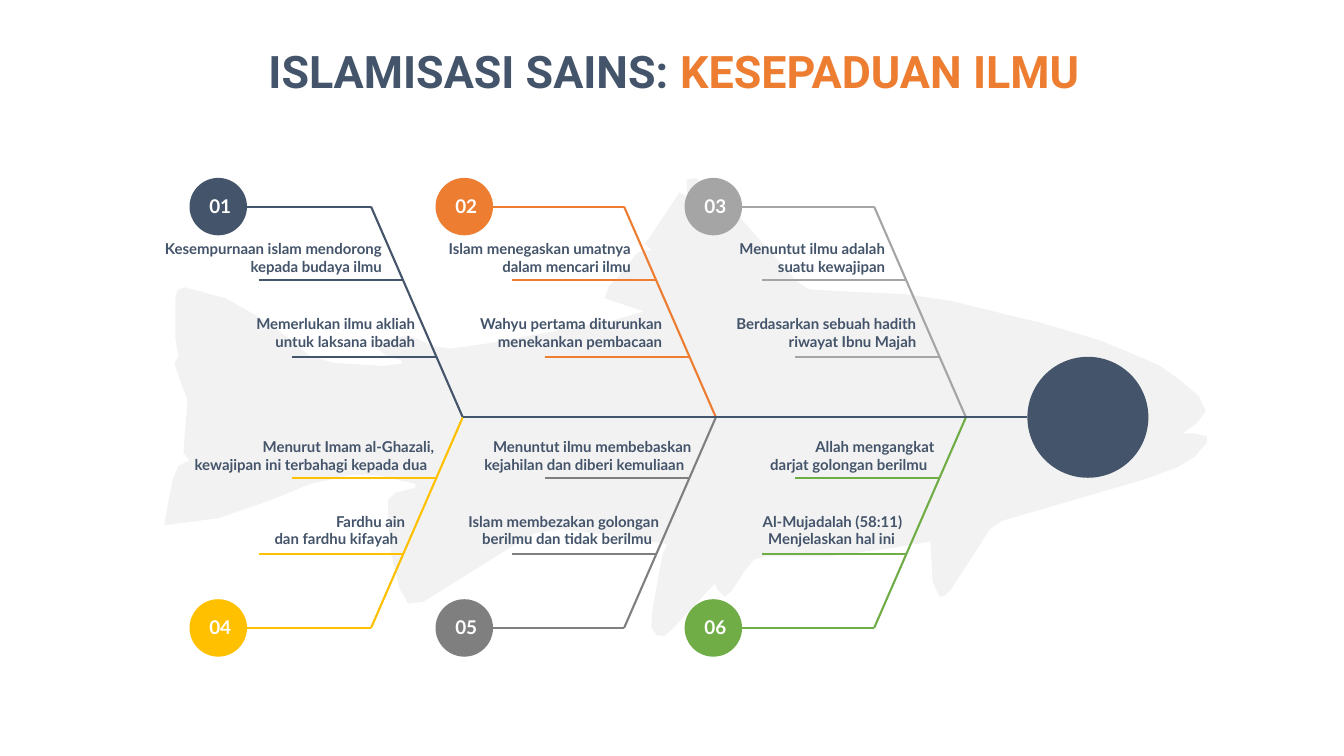
from pptx import Presentation
from pptx.dml.color import RGBColor
from pptx.enum.shapes import MSO_CONNECTOR, MSO_SHAPE
from pptx.enum.text import MSO_ANCHOR, MSO_AUTO_SIZE, PP_ALIGN
from pptx.oxml.ns import qn
from pptx.util import Inches, Pt
from lxml import etree

NAVY = RGBColor(0x44, 0x54, 0x6A)
ORANGE = RGBColor(0xED, 0x7D, 0x31)
SILVER = RGBColor(0xA5, 0xA5, 0xA5)
GOLD = RGBColor(0xFF, 0xC0, 0x00)
GRAY = RGBColor(0x7F, 0x7F, 0x7F)
GREEN = RGBColor(0x70, 0xAD, 0x47)
WHITE = RGBColor(0xFF, 0xFF, 0xFF)
PALE = RGBColor(0xF2, 0xF2, 0xF2)
CENTER, RIGHT = PP_ALIGN.CENTER, PP_ALIGN.RIGHT
MIDDLE, TOP = MSO_ANCHOR.MIDDLE, MSO_ANCHOR.TOP
OVAL, STRAIGHT = MSO_SHAPE.OVAL, MSO_CONNECTOR.STRAIGHT
NO_FIT = MSO_AUTO_SIZE.NONE

TITLE = (("ISLAMISASI SAINS: ", NAVY), ("KESEPADUAN ILMU", ORANGE))

# Each bone: number, colour, then (right edge of text, first line, second line)
BONES = [
    ("01", NAVY, ((3.99, "Kesempurnaan islam mendorong", "kepada budaya ilmu"),
                  (4.32, "Memerlukan ilmu akliah", "untuk laksana ibadah"))),
    ("02", ORANGE, ((6.46, "Islam menegaskan umatnya", "dalam mencari ilmu"),
                    (6.77, "Wahyu pertama diturunkan", "menekankan pembacaan"))),
    ("03", SILVER, ((8.98, "Menuntut ilmu adalah", "suatu kewajipan"),
                    (9.29, "Berdasarkan sebuah hadith", "riwayat Ibnu Majah"))),
    ("04", GOLD, ((4.15, "Fardhu ain", "dan fardhu kifayah"),
                  (4.44, "Menurut Imam al-Ghazali,", "kewajipan ini terbahagi kepada dua"))),
    ("05", GRAY, ((6.67, "Islam membezakan golongan", "berilmu dan tidak berilmu"),
                  (6.99, "Menuntut ilmu membebaskan", "kejahilan dan diberi kemuliaan"))),
    ("06", GREEN, ((9.08, "Al-Mujadalah (58:11)", "Menjelaskan hal ini"),
                   (9.40, "Allah mengangkat", "darjat golongan berilmu"))),
]

FISH = [
    (1197, 439), (1185, 453), (1169, 463), (1137, 475), (993, 517), (982, 525),
    (943, 585), (937, 591), (932, 592), (925, 577), (923, 537), (883, 544),
    (822, 552), (761, 552), (748, 555), (739, 566), (726, 586), (719, 592),
    (712, 585), (709, 579), (667, 624), (659, 631), (651, 630), (646, 622),
    (647, 606), (652, 578), (657, 551), (662, 540), (613, 532), (557, 525),
    (531, 529), (508, 542), (420, 597), (405, 599), (396, 583), (388, 549),
    (385, 514), (385, 496), (392, 489), (412, 484), (412, 480), (377, 472),
    (349, 471), (308, 480), (269, 496), (217, 514), (165, 521), (163, 520),
    (171, 477), (177, 462), (188, 457), (182, 449), (183, 434), (186, 397),
    (176, 370), (173, 360), (177, 354), (174, 336), (174, 296), (176, 288),
    (183, 285), (224, 296), (261, 317), (287, 336), (307, 353), (331, 360),
    (379, 363), (398, 361), (399, 358), (382, 352), (375, 346), (381, 337),
    (405, 333), (413, 336), (428, 343), (447, 346), (482, 341), (608, 318),
    (639, 309), (600, 296), (604, 284), (613, 275), (632, 251), (640, 248),
    (647, 249), (640, 242), (674, 191), (682, 195), (681, 178), (691, 177),
    (734, 216), (790, 279), (802, 287), (817, 288), (855, 290), (900, 292),
    (945, 299), (1035, 321), (1092, 338), (1149, 362), (1169, 376), (1189, 393),
    (1196, 408), (1186, 421), (1173, 430), (1185, 430), (1197, 433),
]

SPINE_Y = 4.14
TAIL_X, HEAD_X, HEAD_SIZE = 4.59, 10.19, 1.2
CORNERS = (3.68, 6.19, 8.67)
BADGES = (1.88, 4.32, 6.79)
BADGE_SIZE = 0.57
BONE_DX, RIB_LEN = 0.91, 1.43
REACH = 2.09
RIB_REACHES = (1.36, 0.6)
TEXT_TOPS = {-1: (2.31, 3.05), 1: (5.01, 4.27)}
TEXT_W, TEXT_H = 2.9, 0.49
LINE_INDENT = 0.07


def write(tf, lines, font="Lato", size=10.7, align=RIGHT, anchor=TOP, inset=(0.13, 0.07, 0.13, 0.07)):
    """Fill a text frame with lines, each a sequence of (text, colour) runs."""
    tf.auto_size = NO_FIT
    tf.word_wrap = True
    tf.vertical_anchor = anchor
    tf.margin_left, tf.margin_top, tf.margin_right, tf.margin_bottom = map(Inches, inset)
    for i, line in enumerate(lines):
        p = tf.add_paragraph() if i else tf.paragraphs[0]
        p.alignment = align
        for text, color in line:
            r = p.add_run()
            r.text = text
            r.font.name, r.font.size, r.font.bold = font, Pt(size), True
            r.font.color.rgb = color


def add_line(shapes, x1, y1, x2, y2, color):
    """Draw one straight bone or rib."""
    s = shapes.add_connector(STRAIGHT, *map(Inches, (x1, y1, x2, y2)))
    s.line.color.rgb, s.line.width = color, Pt(1.5)
    etree.SubElement(s._element.spPr, qn("a:effectLst"))


def paint(s, color):
    """Give a shape a flat fill without outline or shadow."""
    s.shadow.inherit = False
    s.fill.solid()
    s.fill.fore_color.rgb = color
    s.line.fill.background()


def add_disc(shapes, x, y, size, color):
    """Draw a filled circle."""
    s = shapes.add_shape(OVAL, *map(Inches, (x, y, size, size)))
    paint(s, color)
    return s


def add_bone(shapes, index, number, color, notes):
    """Draw a bone with its ribs, texts and numbered badge."""
    side = 1 if index >= len(CORNERS) else -1
    corner, badge_x = CORNERS[index % 3], BADGES[index % 3]
    end_y = SPINE_Y + side * REACH
    add_line(shapes, corner, end_y, corner + BONE_DX, SPINE_Y, color)
    add_line(shapes, corner - RIB_LEN, end_y, corner, end_y, color)
    for reach, top, (right, first, second) in zip(RIB_REACHES, TEXT_TOPS[side], notes):
        rib_x = corner + BONE_DX * (1 - reach / REACH)
        rib_y = SPINE_Y + side * reach
        add_line(shapes, rib_x - RIB_LEN, rib_y, rib_x, rib_y, color)
        box = shapes.add_textbox(*map(Inches, (right - TEXT_W, top, TEXT_W, TEXT_H)))
        write(box.text_frame, [[(first, NAVY)], [(second, NAVY)]])
        indented = box.text_frame.paragraphs[0 if side < 0 else 1]
        indented._p.get_or_add_pPr().set("marR", str(Inches(LINE_INDENT)))
    badge = add_disc(shapes, badge_x, end_y - BADGE_SIZE / 2, BADGE_SIZE, color)
    write(badge.text_frame, [[(number, WHITE)]], size=13.5, align=CENTER, anchor=MIDDLE,
          inset=(0.04, 0, 0, 0.02))


def main():
    """Build the fishbone slide."""
    prs = Presentation()
    prs.slide_width, prs.slide_height = Inches(13.33), Inches(7.5)
    shapes = prs.slides.add_slide(prs.slide_layouts[5]).shapes

    outline = shapes.build_freeform(*FISH[0], scale=Inches(0.01))
    outline.add_line_segments(FISH[1:], close=True)
    paint(outline.convert_to_shape(), PALE)

    title = shapes.title
    title.left, title.top, title.width, title.height = map(Inches, (2, 0.43, 9.37, 0.54))
    write(title.text_frame, [TITLE], font="Roboto", size=32, align=CENTER, anchor=MIDDLE,
          inset=(0, 0, 0, 0))

    add_disc(shapes, HEAD_X, SPINE_Y - HEAD_SIZE / 2, HEAD_SIZE, NAVY)
    for index, bone in enumerate(BONES):
        add_bone(shapes, index, *bone)
    add_line(shapes, TAIL_X, SPINE_Y, HEAD_X, SPINE_Y, NAVY)
    prs.save("out.pptx")


if __name__ == "__main__":
    main()
